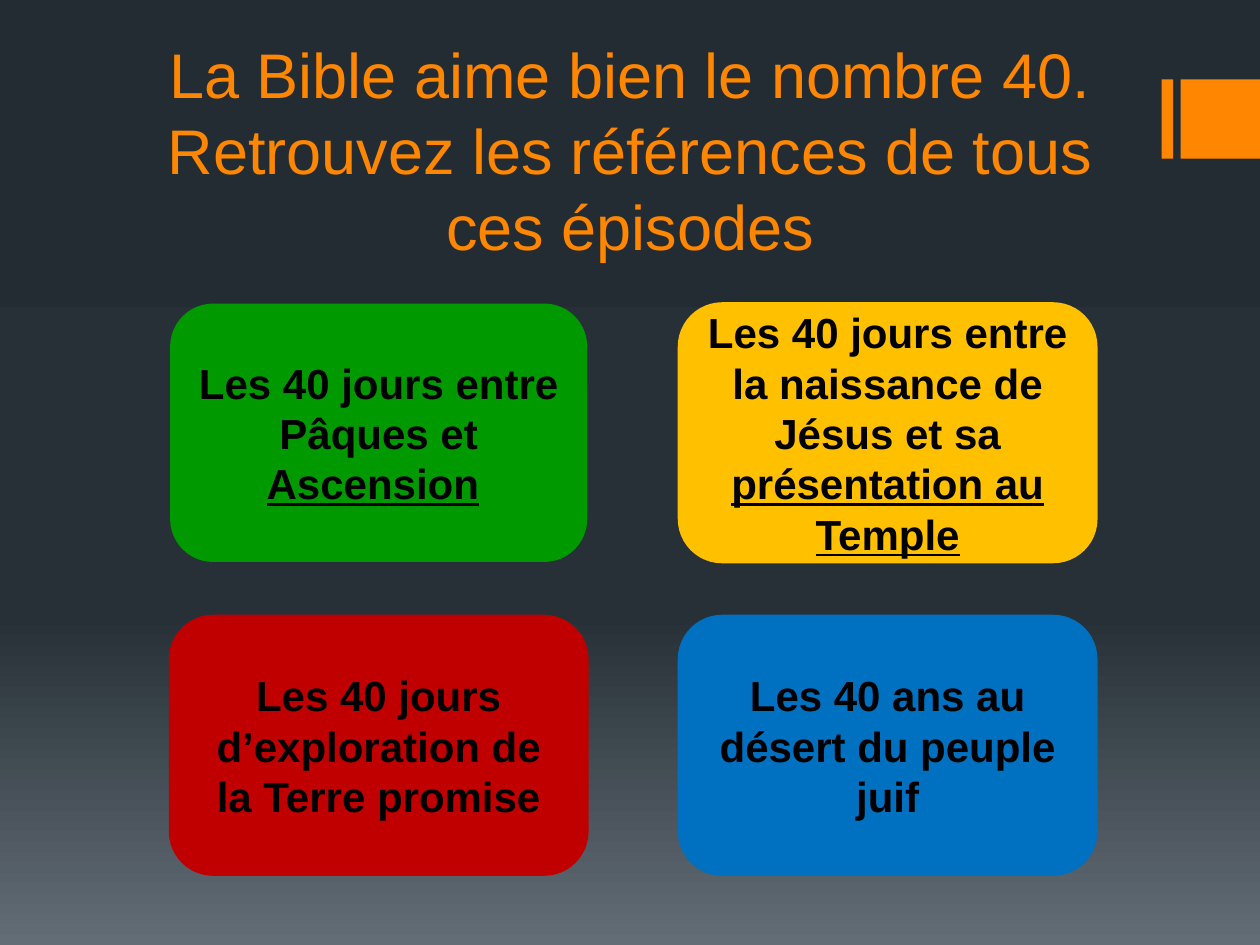
from copy import deepcopy

from pptx import Presentation
from pptx.dml.color import RGBColor
from pptx.enum import shapes, text
from pptx.oxml.ns import qn
from pptx.util import Cm, Pt

ORANGE = RGBColor(0xFF, 0x86, 0x00)
GREEN = RGBColor(0x00, 0x99, 0x00)
YELLOW = RGBColor(0xFF, 0xC0, 0x00)
RED = RGBColor(0xC0, 0x00, 0x00)
BLUE = RGBColor(0x00, 0x70, 0xC0)
BLACK = RGBColor(0, 0, 0)
BACKGROUND = [
    (0, RGBColor(0x24, 0x2C, 0x33)),
    (0.65, RGBColor(0x27, 0x30, 0x37)),
    (1, RGBColor(0x63, 0x6D, 0x76)),
]

TITLE = "La Bible aime bien le nombre 40. Retrouvez les références de tous ces épisodes"
# Each card: fill, has an outline, spans as (words, underlined)
CARDS = [
    (GREEN, False, [("Les 40 jours entre Pâques et ", False), ("Ascension", True), (" ", False)]),
    (YELLOW, True, [("Les 40 jours entre la naissance de Jésus et sa ", False),
                    ("présentation au Temple", True)]),
    (RED, True, [("Les 40 jours d’exploration de la Terre promise", False)]),
    (BLUE, True, [("Les 40 ans au désert du peuple juif", False)]),
]
TITLE_FONT = {"name": "Arial", "size": Pt(36), "bold": False}
CARD_FONT = {"name": "Arial", "size": Pt(24), "bold": True}

CARD_LEFT, CARD_TOP = 3.43, 6.12
CARD_WIDTH, CARD_HEIGHT = 8.41, 5.21
COLUMN_STEP, ROW_STEP = 10.26, 6.3
BAR_TOP, BAR_SIZE = 1.6, 1.6
BARS = [(23.42, 0.23), (23.8, BAR_SIZE)]


def add_span(para, words, color, font_values):
    span = para.add_run()
    span.text = words
    for name, value in font_values.items():
        setattr(span.font, name, value)
    span.font.color.rgb = color


def add_block(page, kind, left, top, width, height, color):
    block = page.shapes.add_shape(kind, Cm(left), Cm(top), Cm(width), Cm(height))
    block.shadow.inherit = False
    block.fill.solid()
    block.fill.fore_color.rgb = color
    block.line.fill.background()
    return block


def paint_background(page):
    fill = page.background.fill
    fill.gradient()
    fill.gradient_angle = 270
    stop_list = next(page.element.iter(qn("a:gsLst")))
    stop_list.append(deepcopy(stop_list[-1]))
    for stop, (position, color) in zip(fill.gradient_stops, BACKGROUND):
        stop.position = position
        stop.color.rgb = color


def add_title(page):
    title = page.shapes.title
    title.left, title.top, title.width, title.height = Cm(2.54), Cm(0.91), Cm(20.32), Cm(4.2)
    frame = title.text_frame
    frame.auto_size = text.MSO_AUTO_SIZE.NONE
    frame.vertical_anchor = text.MSO_ANCHOR.MIDDLE
    para = frame.paragraphs[0]
    para.alignment = text.PP_ALIGN.CENTER
    add_span(para, TITLE, ORANGE, TITLE_FONT)


def add_card(page, index, color, outlined, spans):
    row, column = divmod(index, 2)
    card = add_block(page, shapes.MSO_SHAPE.ROUNDED_RECTANGLE,
                     CARD_LEFT + column * COLUMN_STEP, CARD_TOP + row * ROW_STEP,
                     CARD_WIDTH, CARD_HEIGHT, color)
    if outlined:
        card.line.color.rgb = color
        card.line.width = Pt(1.5)
    frame = card.text_frame
    frame.word_wrap = True
    frame.vertical_anchor = text.MSO_ANCHOR.MIDDLE
    para = frame.paragraphs[0]
    para.alignment = text.PP_ALIGN.CENTER
    for words, underlined in spans:
        add_span(para, words, BLACK, {**CARD_FONT, "underline": underlined})


def main():
    deck = Presentation()
    deck.slide_width, deck.slide_height = Cm(25.4), Cm(19.05)
    page = deck.slides.add_slide(deck.slide_layouts.get_by_name("Title Only"))
    paint_background(page)
    for left, width in BARS:
        add_block(page, shapes.MSO_SHAPE.RECTANGLE, left, BAR_TOP, width, BAR_SIZE, ORANGE)
    add_title(page)
    for index, card in enumerate(CARDS):
        add_card(page, index, *card)
    deck.save("out.pptx")


if __name__ == "__main__":
    main()
